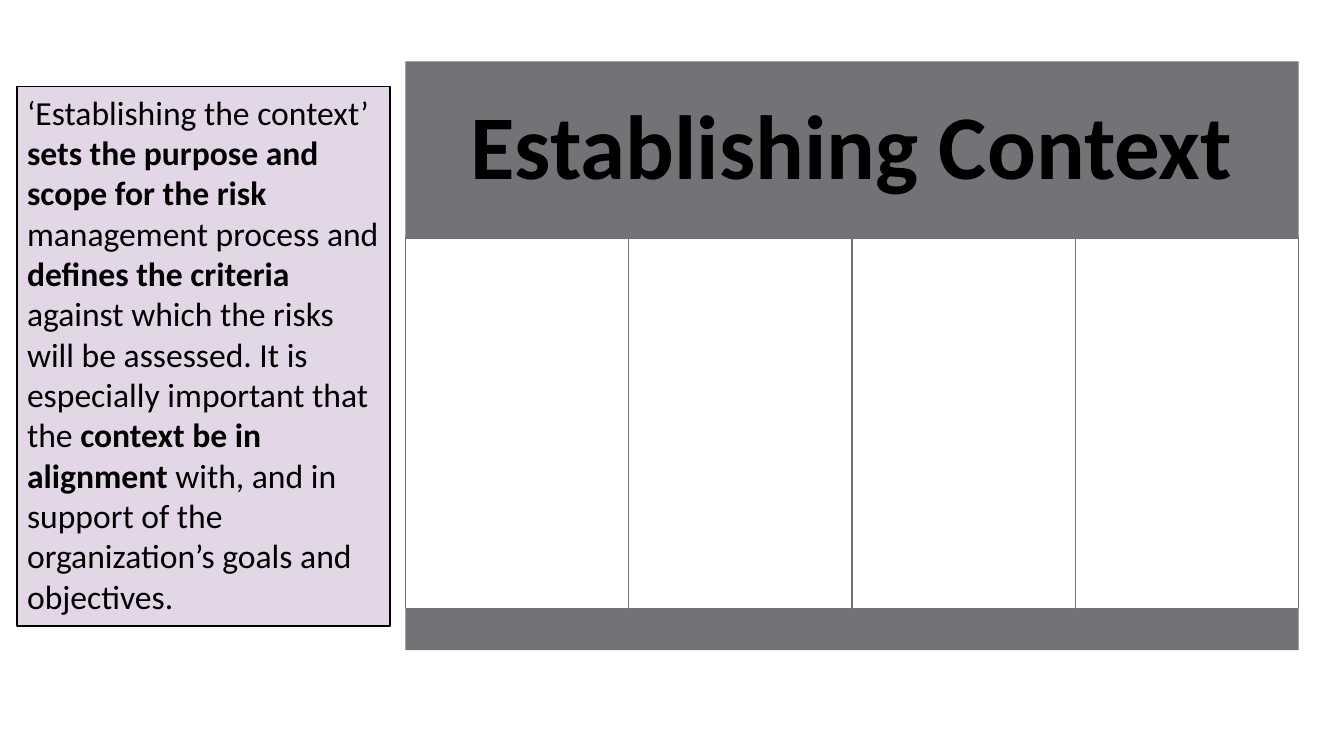
from pptx import Presentation
from pptx.dml.color import RGBColor
from pptx.enum.shapes import MSO_SHAPE as Shape
from pptx.enum.text import MSO_ANCHOR as Anchor, MSO_AUTO_SIZE as AutoSize, PP_ALIGN as Align
from pptx.util import Inches, Pt

COLORS = {"gray": "727377", "white": "FFFFFF", "lilac": "E3D6E7", "black": "000000"}


def color(name):
    return RGBColor.from_string(COLORS[name])


def apply(target, values):
    for name, value in values.items():
        setattr(target, name, value)


class SlideBuilder:
    font_name = "Calibri"

    def __init__(self, slide):
        self.slide = slide

    def box(self, left, top, width, height, fill, line=None):
        shape = self.slide.shapes.add_shape(
            Shape.RECTANGLE, Inches(left), Inches(top), Inches(width), Inches(height))
        shape.shadow.inherit = False
        shape.fill.solid()
        shape.fill.fore_color.rgb = color(fill)
        if line:
            shape.line.color.rgb = color(line)
            shape.line.width = Pt(1)
        else:
            shape.line.fill.background()
        return shape

    def text(self, shape, runs, size, frame_format, paragraph_format):
        """Write (text, bold) runs as one paragraph inside the shape."""
        frame = shape.text_frame
        apply(frame, {"word_wrap": True, **frame_format})
        paragraph = frame.paragraphs[0]
        apply(paragraph, paragraph_format)
        for words, bold in runs:
            run = paragraph.add_run()
            run.text = words
            apply(run.font, {"name": self.font_name, "size": Pt(size), "bold": bold})
            run.font.color.rgb = color("black")


def main():
    presentation = Presentation()
    presentation.slide_width = Inches(13.33)
    presentation.slide_height = Inches(7.5)
    builder = SlideBuilder(presentation.slides.add_slide(presentation.slide_layouts[6]))

    # Panel: header, four empty columns, footer
    left, width = 4.02, 8.86
    header_top, columns_top, footer_top = 0.61, 2.36, 6.04
    header = builder.box(left, header_top, width, columns_top - header_top, "gray")
    margins = {f"margin_{side}": Inches(0.27) for side in ("left", "top", "right", "bottom")}
    builder.text(header, [("Establishing Context", True)], 65,
                 {"vertical_anchor": Anchor.MIDDLE, **margins},
                 {"alignment": Align.CENTER, "line_spacing": 0.9})

    column_count = 4
    column_width = width / column_count
    for index in range(column_count):
        builder.box(left + index * column_width, columns_top, column_width,
                    footer_top - columns_top, "white", "gray")
    builder.box(left, footer_top, width, 0.41, "gray")

    # Explanation on the left
    explanation = builder.box(0.17, 0.86, 3.7, 5.35, "lilac", "black")
    builder.text(explanation, [
        ("‘Establishing the context’ ", False),
        ("sets the purpose and scope for the risk ", True),
        ("management process and ", False),
        ("defines the criteria ", True),
        ("against which the risks will be assessed. "
         "It is especially important that the ", False),
        ("context be in alignment ", True),
        ("with, and in support of the organization’s goals and objectives.", False),
    ], 24, {"vertical_anchor": Anchor.TOP, "auto_size": AutoSize.SHAPE_TO_FIT_TEXT},
        {"alignment": Align.LEFT})

    presentation.save("out.pptx")


if __name__ == "__main__":
    main()
